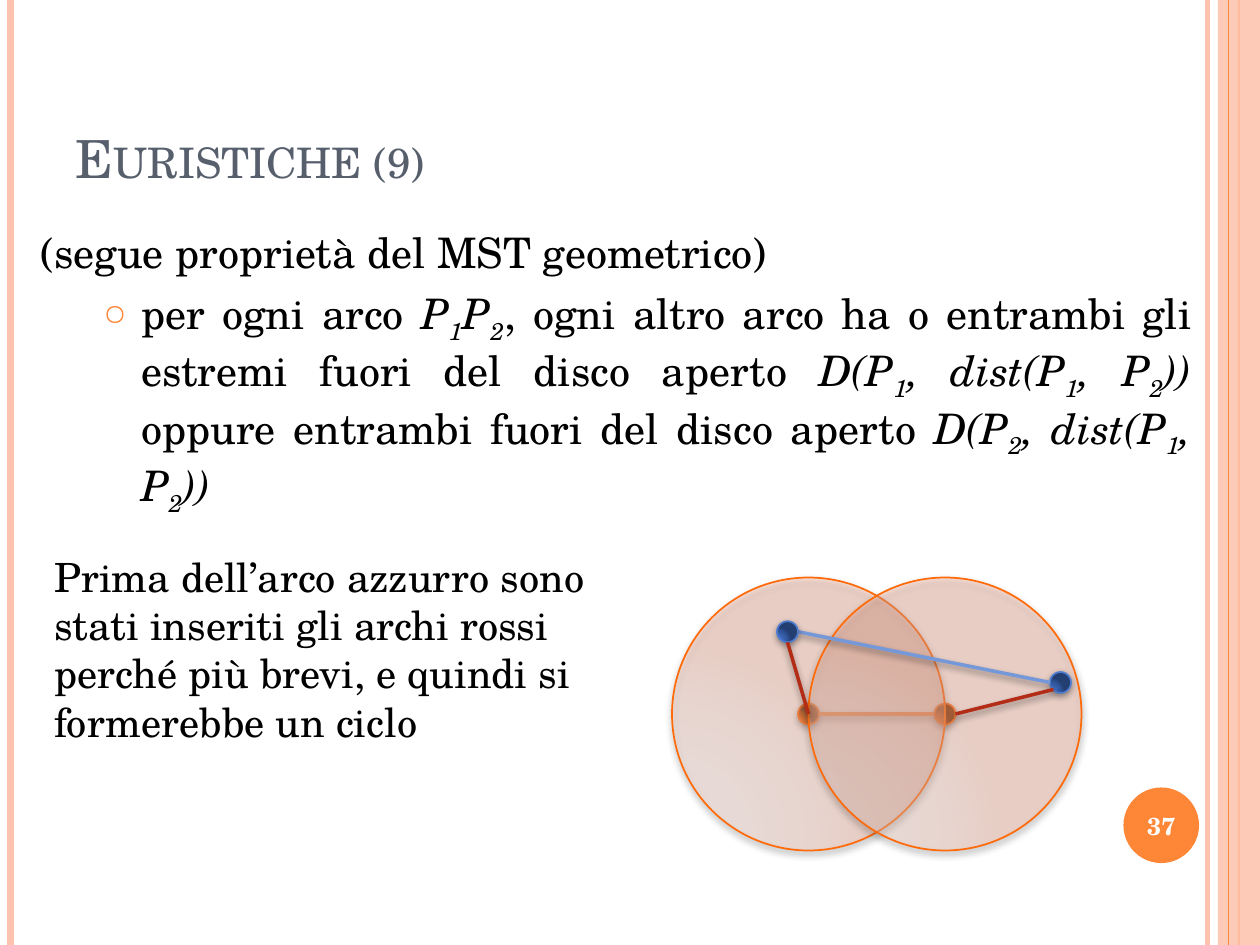
from lxml.etree import SubElement
from pptx import Presentation
from pptx.dml.color import RGBColor
from pptx.enum.shapes import MSO_CONNECTOR, MSO_SHAPE
from pptx.enum.text import MSO_ANCHOR, MSO_AUTO_SIZE, PP_ALIGN
from pptx.oxml.ns import qn
from pptx.util import Pt

FONT = "TeX Gyre Schola"
BLACK = RGBColor(0x00, 0x00, 0x00)
WHITE = RGBColor(0xFF, 0xFF, 0xFF)
SLATE = RGBColor(0x57, 0x5F, 0x6D)
PINK = RGBColor(0xFE, 0xC3, 0xAE)
ORANGE = RGBColor(0xFE, 0x86, 0x37)
RIM_ORANGE = RGBColor(0xFF, 0x6B, 0x0A)
RIM_BLUE = RGBColor(0x4F, 0x7C, 0xCF)
BLUE = RGBColor(0x75, 0x98, 0xD9)
RED = RGBColor(0xB3, 0x2C, 0x16)
STOPS = (0, 30, 75, 100)
ORANGE_NODE = [RGBColor.from_string(c) for c in ("FD6400", "F46100", "B74900", "873600")]
BLUE_NODE = [RGBColor.from_string(c) for c in ("4574CC", "4370C5", "2F5397", "233E70")]
DISC = [RGBColor.from_string(c) for c in ("FFDED5", "FFDBD0", "FFC8B6", "FFB59B")]
EDGE_SHADOW = (40, 2)
NODE_SHADOW = (42, 1.6)


def add_color(parent, color, opacity):
    tint = SubElement(parent, qn("a:srgbClr"), val=str(color))
    SubElement(tint, qn("a:alpha"), val=str(opacity * 1000))


def set_shadow(item, shadow=None):
    effects = SubElement(item._element.spPr, qn("a:effectLst"))
    if shadow:
        opacity, distance = shadow
        outer = SubElement(effects, qn("a:outerShdw"), blurRad=str(Pt(4)),
                           dist=str(Pt(distance)), dir="5400000", rotWithShape="0")
        add_color(outer, BLACK, opacity)


def set_gradient(shape, colors, opacity):
    shape.fill.gradient()
    gradient = shape._element.spPr.find(qn("a:gradFill"))
    for child in list(gradient):
        gradient.remove(child)
    stops = SubElement(gradient, qn("a:gsLst"))
    for position, color in zip(STOPS, colors):
        add_color(SubElement(stops, qn("a:gs"), pos=str(position * 1000)), color, opacity)
    route = SubElement(gradient, qn("a:path"), path="circle")
    SubElement(route, qn("a:fillToRect"), l="5000", t="100000", r="120000", b="10000")


def add_line(shapes, start, end, color, width, shadow=None):
    line = shapes.add_connector(MSO_CONNECTOR.STRAIGHT, *map(Pt, start + end))
    line.line.color.rgb = color
    line.line.width = Pt(width)
    set_shadow(line, shadow)


def add_ball(shapes, center, radius, colors, rim, shadow, opacity=100):
    x, y = center
    ball = shapes.add_shape(MSO_SHAPE.OVAL, Pt(x - radius), Pt(y - radius),
                            Pt(2 * radius), Pt(2 * radius))
    set_gradient(ball, colors, opacity)
    ball.line.color.rgb = rim
    ball.line.width = Pt(1)
    set_shadow(ball, shadow)


def add_span(para, text, size, color=BLACK, **formats):
    span = para.add_run()
    span.text = text
    span.font.color.rgb = color
    for name, value in {"name": FONT, "size": Pt(size), "bold": False, **formats}.items():
        setattr(span.font, name, value)
    return span


def add_marked(para, text, size, italic):
    for index, part in enumerate(text.split("_")):
        if index:
            low = add_span(para, part[0], size, italic=italic)
            low.font._element.set("baseline", "-25000")
            part = part[1:]
        if part:
            add_span(para, part, size, italic=italic)


def add_text_box(page, box):
    frame = page.shapes.add_textbox(*map(Pt, box)).text_frame
    frame.word_wrap = True
    return frame


def add_plain(shapes, kind, box, color):
    shape = shapes.add_shape(kind, *map(Pt, box))
    shape.fill.solid()
    shape.fill.fore_color.rgb = color
    shape.line.fill.background()
    set_shadow(shape)
    return shape


def add_frame(page, box):
    left, top, width, height = box
    right, bottom = left + width, top + height
    for x, color, weight in ((right - 30, PINK, 3), (left + 6, PINK, 4.5),
                             (right - 12, ORANGE, 1.5)):
        add_line(page.shapes, (x, top), (x, bottom), color, weight)
    band = add_plain(page.shapes, MSO_SHAPE.RECTANGLE, (right - 24, top, 24, height), PINK)
    tint = band._element.spPr.find(qn("a:solidFill"))[0]
    SubElement(tint, qn("a:alpha"), val="87000")
    add_line(page.shapes, (right - 18, top), (right - 18, bottom), ORANGE, 0.75)


def add_page_number(page, box):
    left, top, width, height = box
    add_plain(page.shapes, MSO_SHAPE.OVAL, box, ORANGE)
    frame = add_text_box(page, (left - 2, top + 1, width + 4, height - 2))
    frame.vertical_anchor = MSO_ANCHOR.MIDDLE
    para = frame.paragraphs[0]
    para.alignment = PP_ALIGN.CENTER
    add_span(para, "37", 14, WHITE, bold=True)


def add_title(page, box):
    title = page.shapes.title
    for name, value in zip(("left", "top", "width", "height"), box):
        setattr(title, name, Pt(value))
    frame = title.text_frame
    for name, value in {"word_wrap": True, "auto_size": MSO_AUTO_SIZE.NONE,
                        "vertical_anchor": MSO_ANCHOR.BOTTOM}.items():
        setattr(frame, name, value)
    para = frame.paragraphs[0]
    para.alignment = PP_ALIGN.LEFT
    span = add_span(para, "Euristiche (9)", 30, SLATE)
    span.font._element.set("cap", "small")


def add_property(page, box):
    frame = add_text_box(page, box)
    intro, item = frame.paragraphs[0], frame.add_paragraph()
    item.level = 1
    for para, margin in ((intro, 21.6), (item, 57.6)):
        para.alignment = PP_ALIGN.JUSTIFY
        para.space_before = Pt(6)
        layout = para._p.get_or_add_pPr()
        layout.set("marL", str(Pt(margin)))
        layout.set("indent", str(Pt(-21.6)))
    layout = item._p.pPr
    add_color(SubElement(layout, qn("a:buClr")), ORANGE, 100)
    SubElement(layout, qn("a:buSzPct"), val="70000")
    SubElement(layout, qn("a:buChar"), char="○")
    add_span(intro, "(segue proprietà del MST geometrico)", 24)
    parts = ("per ogni arco ", "P_1P_2",
             ", ogni altro arco ha o entrambi gli estremi fuori del disco aperto ",
             "D(P_1, dist(P_1, P_2))", " oppure entrambi fuori del disco aperto ",
             "D(P_2, dist(P_1, P_2))")
    for index, part in enumerate(parts):
        add_marked(item, part, 24, index % 2 == 1)


def add_remark(page, box):
    frame = add_text_box(page, box)
    frame.auto_size = MSO_AUTO_SIZE.SHAPE_TO_FIT_TEXT
    add_span(frame.paragraphs[0], "Prima dell’arco azzurro sono stati inseriti gli archi rossi "
             "perché più brevi, e quindi si formerebbe un ciclo", 23)


def add_discs(page, box):
    left, top, width, height = box
    radius, node = height / 2, 6
    y = top + radius
    centers = ((left + radius, y), (left + width - radius, y))
    discs = page.shapes.add_group_shape().shapes
    for center in centers:
        add_ball(discs, center, node, ORANGE_NODE, RIM_ORANGE, NODE_SHADOW)
    (first, _), (second, _) = centers
    add_line(discs, (first + node, y), (second - node, y), ORANGE, 2, EDGE_SHADOW)
    for center in centers:
        add_ball(discs, center, radius, DISC, RIM_ORANGE, EDGE_SHADOW, 35)

    upper, outer = (left + 66, top + 31), (left + 222, top + 60)
    arc = page.shapes.add_group_shape().shapes
    add_ball(arc, outer, node, BLUE_NODE, RIM_BLUE, NODE_SHADOW)
    add_line(arc, (upper[0] + node, upper[1]), (outer[0] - node, outer[1]),
             BLUE, 2, EDGE_SHADOW)
    add_ball(arc, upper, node, BLUE_NODE, RIM_BLUE, NODE_SHADOW)
    add_line(page.shapes, (upper[0], upper[1] + node), (first, y), RED, 2, EDGE_SHADOW)
    add_line(page.shapes, (outer[0] - 4, outer[1] + 4), (second + node, y),
             RED, 2, EDGE_SHADOW)


def main():
    deck = Presentation()
    deck.slide_width, deck.slide_height = Pt(720), Pt(540)
    page = deck.slides.add_slide(deck.slide_layouts[5])
    add_frame(page, (0, 0, 720, 540))
    add_title(page, (36, 21.6, 588, 90))
    add_page_number(page, (642, 450, 43.2, 43.2))
    add_property(page, (16, 126, 672, 186))
    add_remark(page, (24, 312, 360, 119))
    add_discs(page, (384, 330, 234, 156))
    deck.save("out.pptx")


if __name__ == "__main__":
    main()
